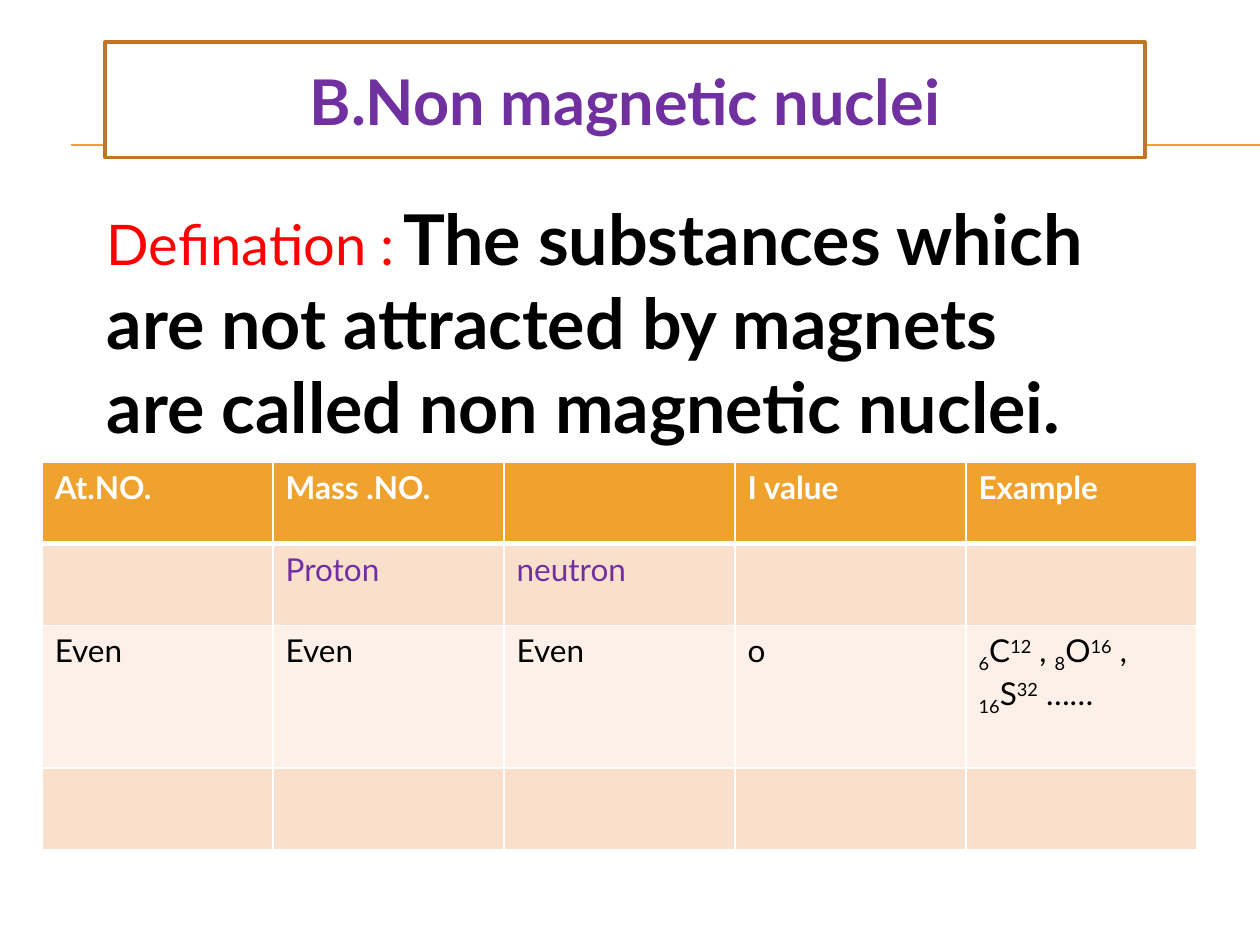
from lxml.etree import SubElement
from pptx import Presentation
from pptx.dml.color import RGBColor
from pptx.enum.shapes import MSO_CONNECTOR
from pptx.enum.text import MSO_ANCHOR, MSO_AUTO_SIZE, PP_ALIGN
from pptx.oxml.ns import qn
from pptx.util import Cm, Pt

WHITE = RGBColor(0xFF, 0xFF, 0xFF)
BLACK = RGBColor(0x00, 0x00, 0x00)
RED = RGBColor(0xFF, 0x00, 0x00)
PURPLE = RGBColor(0x70, 0x30, 0xA0)
ORANGE = RGBColor(0xF0, 0xA2, 0x2E)
BROWN = RGBColor(0xC1, 0x75, 0x29)
PEACH = RGBColor(0xF9, 0xE0, 0xCD)
CREAM = RGBColor(0xFC, 0xF0, 0xE8)

SUB, SUP = -25000, 30000
HEADER = {"size": Pt(18), "bold": True, "color": WHITE}
PARTICLE = {"size": Pt(18), "bold": False, "color": PURPLE}
BODY = {"size": Pt(18), "bold": False, "color": BLACK}

ROWS = [
    (["At.NO.", "Mass .NO.", "", "I value", "Example"], HEADER, ORANGE, 1.65),
    (["", "Proton", "neutron", "", ""], PARTICLE, PEACH, 1.65),
    (["Even", "Even", "Even", "o", ""], BODY, CREAM, 2.87),
    ([""] * 5, BODY, PEACH, 1.65),
]
NUCLEI = [("6", "C", "12", " , "), ("8", "O", "16", " , "), ("16", "S", "32", " ……")]


def add_run(p, text, fmt, baseline=0):
    r = p.add_run()
    r.text = text
    r.font.name = "Lato"
    for name, value in fmt.items():
        if name == "color":
            r.font.color.rgb = value
        else:
            setattr(r.font, name, value)
    if baseline:
        r.font._element.set("baseline", str(baseline))


def add_rules(slide, left, right, tops):
    for top in tops:
        line = slide.shapes.add_connector(
            MSO_CONNECTOR.STRAIGHT, Cm(left), Cm(top), Cm(right), Cm(top))
        line.line.color.rgb = ORANGE
        line.line.width = Pt(0.75)
        SubElement(line._element.spPr, qn("a:effectLst"))


def place_title(slide, left, top, width, height):
    sp = slide.shapes.title
    slide.shapes._spTree.append(sp._element)
    box = {"left": left, "top": top, "width": width, "height": height}
    for name, value in box.items():
        setattr(sp, name, Cm(value))
    sp.fill.solid()
    sp.fill.fore_color.rgb = WHITE
    sp.line.color.rgb = BROWN
    sp.line.width = Pt(2)
    tf = sp.text_frame
    tf.vertical_anchor = MSO_ANCHOR.MIDDLE
    p = tf.paragraphs[0]
    p.alignment = PP_ALIGN.CENTER
    add_run(p, "B.Non magnetic nuclei", {"size": Pt(36), "bold": True, "color": PURPLE})


def set_borders(cell, bottom):
    tc_pr = cell._tc.get_or_add_tcPr()
    for side, width in (("L", 1), ("R", 1), ("T", 1), ("B", bottom)):
        ln = SubElement(tc_pr, qn(f"a:ln{side}"), w=str(Pt(width)))
        fill = SubElement(ln, qn("a:solidFill"))
        SubElement(fill, qn("a:srgbClr"), val=str(WHITE))


def add_nuclei(p):
    for number, symbol, mass, gap in NUCLEI:
        add_run(p, number, BODY, SUB)
        add_run(p, symbol, BODY)
        add_run(p, mass, BODY, SUP)
        add_run(p, gap, BODY)


def add_nuclei_table(slide, left, top, width):
    height = sum(row[3] for row in ROWS)
    table = slide.shapes.add_table(
        len(ROWS), 5, Cm(left), Cm(top), Cm(width), Cm(height)).table
    for i, (texts, fmt, color, row_height) in enumerate(ROWS):
        table.rows[i].height = Cm(row_height)
        for j, text in enumerate(texts):
            cell = table.cell(i, j)
            set_borders(cell, 3 if i == 0 else 1)
            cell.fill.solid()
            cell.fill.fore_color.rgb = color
            if text:
                add_run(cell.text_frame.paragraphs[0], text, fmt)
    add_nuclei(table.cell(2, 4).text_frame.paragraphs[0])


def add_definition(slide, left, top, width, height):
    sp = slide.shapes.add_textbox(Cm(left), Cm(top), Cm(width), Cm(height))
    tf = sp.text_frame
    tf.word_wrap = True
    tf.auto_size = MSO_AUTO_SIZE.SHAPE_TO_FIT_TEXT
    p = tf.paragraphs[0]
    add_run(p, "Defination :", {"size": Pt(32), "color": RED})
    add_run(p, " ", BODY)
    add_run(p, "The substances which are not attracted by magnets "
               "are called non magnetic nuclei.",
            {"size": Pt(40), "bold": True, "color": BLACK})


def main():
    prs = Presentation()
    prs.slide_width, prs.slide_height = Cm(25.4), Cm(19.05)
    slide = prs.slides.add_slide(prs.slide_layouts[5])
    add_rules(slide, 1.43, 25.4, (2.92, 2.94))
    place_title(slide, 2.12, 0.85, 20.96, 2.33)
    add_nuclei_table(slide, 0.85, 9.31, 23.28)
    add_definition(slide, 1.9, 3.81, 20.75, 5.38)
    prs.save("out.pptx")


if __name__ == "__main__":
    main()
